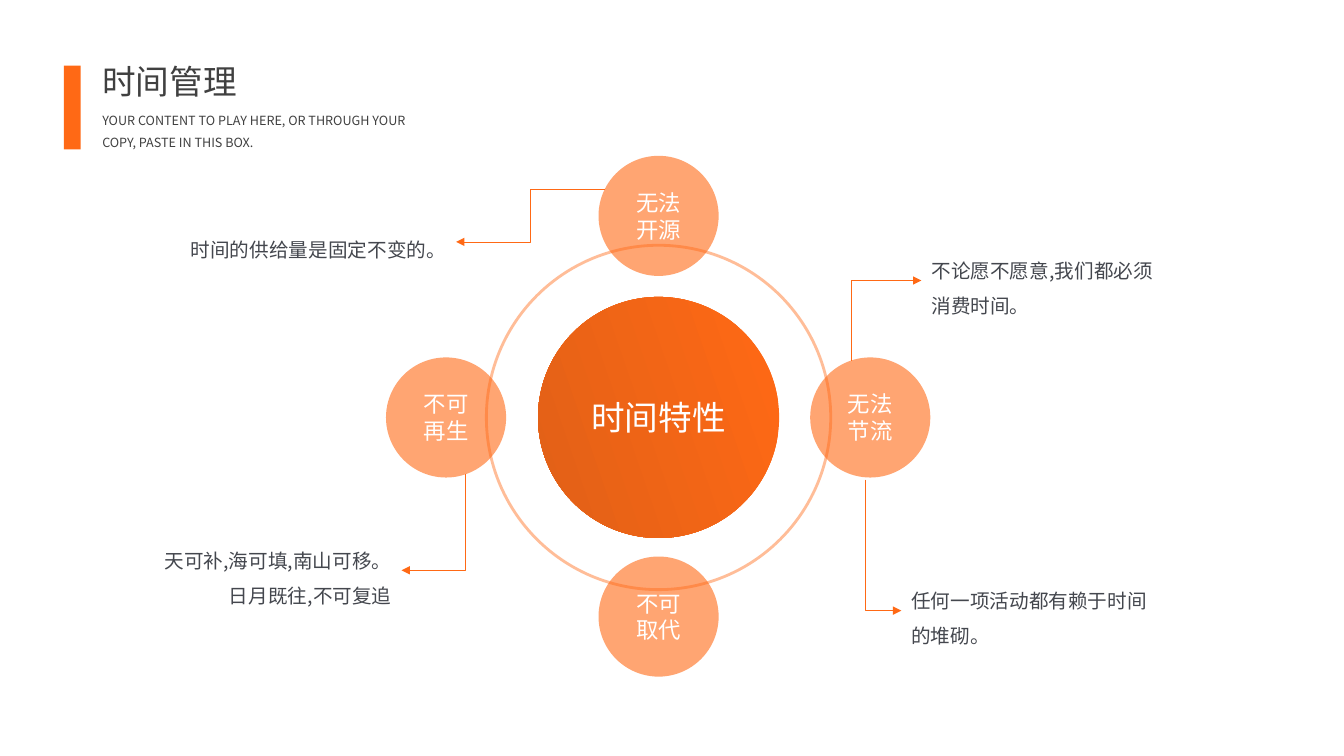
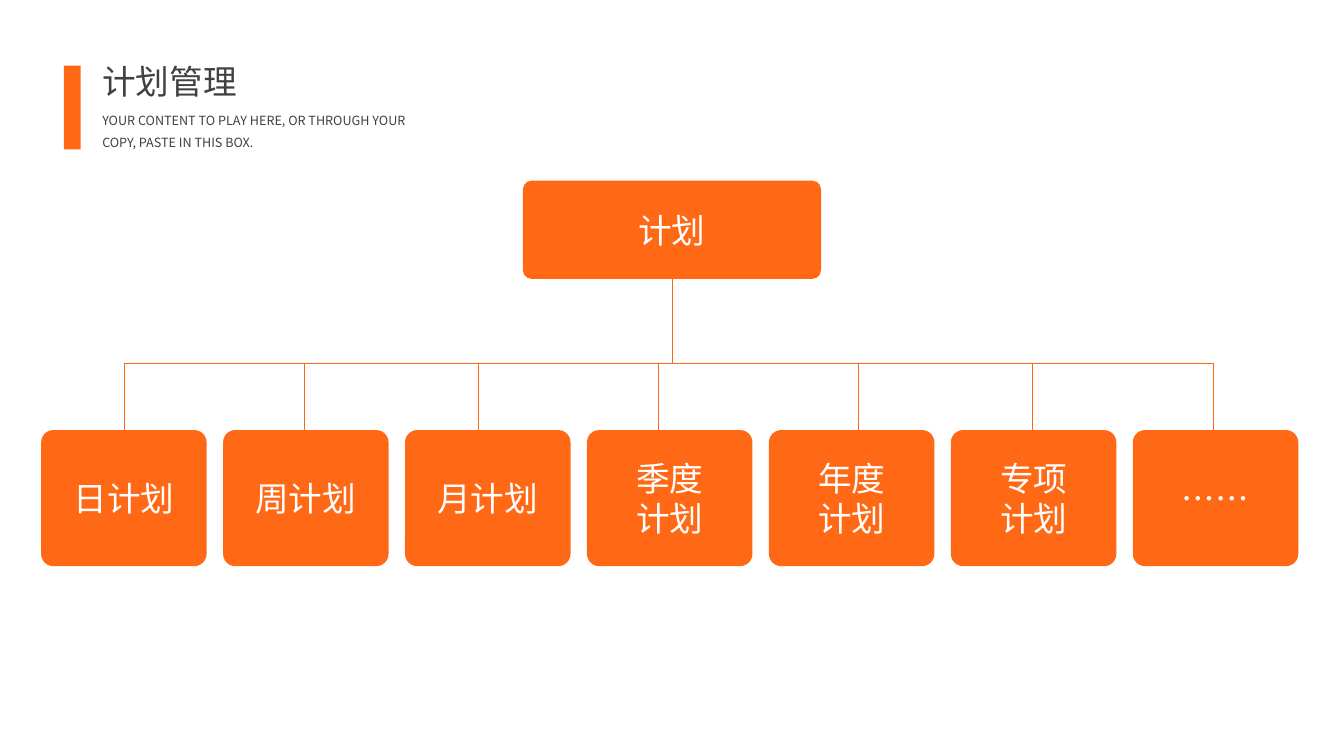
from dataclasses import dataclass

from pptx import Presentation
from pptx.dml.color import RGBColor
from pptx.enum.shapes import MSO_CONNECTOR as LINE, MSO_SHAPE as SHAPE
from pptx.enum.text import MSO_ANCHOR as ANCHOR, PP_ALIGN as ALIGN
from pptx.oxml.ns import qn
from pptx.util import Inches, Pt

# Shared look
FONT = "Noto Sans CJK SC"
ORANGE = RGBColor(0xFF, 0x69, 0x15)
DARK_ORANGE = RGBColor(0xE1, 0x60, 0x17)
WHITE = RGBColor(0xFF, 0xFF, 0xFF)
TITLE_GREY = RGBColor(0x40, 0x40, 0x40)
NOTE_GREY = RGBColor(0x44, 0x47, 0x4E)
SUBTITLE = "YOUR CONTENT TO PLAY HERE, OR THROUGH YOUR COPY, PASTE IN THIS BOX."

# The slide is a grid of 160 columns by 90 rows of square cells
WIDTH, HEIGHT = Inches(13.333), Inches(7.5)
CELL = HEIGHT / 90


def cells(*counts: float) -> list[int]:
    return [round(n * CELL) for n in counts]


@dataclass(frozen=True)
class Style:
    size: float
    color: RGBColor = WHITE
    align: ALIGN = ALIGN.LEFT
    spacing: float = 1.0


@dataclass(frozen=True)
class Satellite:
    lines: tuple[str, ...]
    dx: float  # offset from the centre of the disc
    dy: float


@dataclass(frozen=True)
class Note:
    lines: tuple[str, ...]
    start: tuple[float, float]
    tip: tuple[float, float]
    corners: int = 1


@dataclass(frozen=True)
class Plan:
    lines: tuple[str, ...]
    drop: float  # column of the line above the card


# Drawing helpers
def write(tf, lines: tuple[str, ...], style: Style) -> None:
    for i, line in enumerate(lines):
        p = tf.paragraphs[0] if i == 0 else tf.add_paragraph()
        p.alignment, p.line_spacing = style.align, style.spacing
        r = p.add_run()
        r.text = line
        r.font.size, r.font.name = Pt(style.size), FONT
        r.font.color.rgb = style.color
        ea = r._r.get_or_add_rPr().makeelement(qn("a:ea"), {"typeface": FONT})
        r._r.rPr.find(qn("a:latin")).addnext(ea)


def add_text(s, box: tuple[float, ...], lines: tuple[str, ...], style: Style) -> None:
    tf = s.shapes.add_textbox(*cells(*box)).text_frame
    tf.word_wrap = True
    write(tf, lines, style)


def add_block(s, kind: SHAPE, box: tuple[float, ...],
              lines: tuple[str, ...] = (), size: float = 24):
    sp = s.shapes.add_shape(kind, *cells(*box))
    sp.shadow.inherit = False
    sp.fill.solid()
    sp.fill.fore_color.rgb = ORANGE
    sp.line.fill.background()
    tf = sp.text_frame
    tf.word_wrap = False
    tf.vertical_anchor = ANCHOR.MIDDLE
    tf.margin_left = tf.margin_right = tf.margin_top = tf.margin_bottom = 0
    write(tf, lines, Style(size, align=ALIGN.CENTER))
    return sp


def add_circle(s, x: float, y: float, diameter: float,
               lines: tuple[str, ...] = (), size: float = 24):
    box = (x - diameter / 2, y - diameter / 2, diameter, diameter)
    return add_block(s, SHAPE.OVAL, box, lines, size)


def set_alpha(sp, percent: int) -> None:
    color = sp._element.spPr.find(".//" + qn("a:srgbClr"))
    color.append(color.makeelement(qn("a:alpha"), {"val": str(percent * 1000)}))


def add_line(s, start: tuple[float, float], end: tuple[float, float],
             kind: LINE = LINE.STRAIGHT):
    cx = s.shapes.add_connector(kind, *cells(*start, *end))
    cx.line.color.rgb, cx.line.width = ORANGE, Pt(0.5)
    pr = cx._element.spPr
    pr.append(pr.makeelement(qn("a:effectLst"), {}))
    return cx


def add_arrow(s, note: Note) -> None:
    cx = add_line(s, note.start, note.tip, LINE.ELBOW)
    ln = cx.line._get_or_add_ln()
    ln.append(ln.makeelement(qn("a:tailEnd"), {"type": "triangle"}))
    if note.corners == 2:
        return
    # One corner, vertical first: a quarter turn with swapped sides
    (x1, y1), (x2, y2) = note.start, note.tip
    w, h = abs(y2 - y1), abs(x2 - x1)
    cx.left, cx.top, cx.width, cx.height = cells(
        (x1 + x2 - w) / 2, (y1 + y2 - h) / 2, w, h)
    pr = cx._element.spPr
    pr.find(qn("a:prstGeom")).set("prst", "bentConnector2")
    xfrm = pr.find(qn("a:xfrm"))
    xfrm.set("rot", str(90 * 60000))
    xfrm.set("flipH", str(int(y2 < y1)))
    xfrm.set("flipV", str(int(x2 > x1)))


def add_note(s, note: Note) -> None:
    """Text beside the arrow tip, centred on it."""
    add_arrow(s, note)
    x, y = note.tip
    to_left = x < note.start[0]
    w, h = 33.1, 0.6 + 4.3 * len(note.lines)
    align = ALIGN.RIGHT if to_left else ALIGN.LEFT
    add_text(s, (x - w if to_left else x, y - h / 2, w, h), note.lines,
             Style(14, NOTE_GREY, align, 1.5))


def new_slide(prs, title: str):
    s = prs.slides.add_slide(prs.slide_layouts[6])
    add_text(s, (11, 6.7, 26.5, 6), (title,), Style(24, TITLE_GREY))
    add_text(s, (11, 11.9, 39.8, 6.7), (SUBTITLE,), Style(9, TITLE_GREY, spacing=1.5))
    add_block(s, SHAPE.RECTANGLE, (7.6, 7.8, 2, 10))
    return s


# Slide 1: features of time around a disc
HUB_X, HUB_Y = 78.4, 49.7
SATELLITES = (
    Satellite(("无法", "开源"), 0, -24),
    Satellite(("不可", "取代"), 0, 23.7),
    Satellite(("不可", "再生"), -25.3, 0),
    Satellite(("无法", "节流"), 25.2, 0),
)
NOTES = (
    Note(("时间的供给量是固定不变的。",), (72, 22.6), (54.3, 28.8), 2),
    Note(("不论愿不愿意,我们都必须", "消费时间。"), (101.3, 43), (109.7, 33.4)),
    Note(("天可补,海可填,南山可移。", "日月既往,不可复追"), (55.4, 56.4), (47.8, 67.9)),
    Note(("任何一项活动都有赖于时间", "的堆砌。"), (103, 57.1), (107.3, 72.7)),
)


def time_slide(prs) -> None:
    s = new_slide(prs, "时间管理")
    disc = add_circle(s, HUB_X, HUB_Y, 28.7, ("时间特性",))
    disc.fill.gradient()
    disc.fill.gradient_angle = 199
    stops = ((0.03, ORANGE), (1, DARK_ORANGE))
    for stop, (position, color) in zip(disc.fill.gradient_stops, stops):
        stop.position, stop.color.rgb = position, color

    ring = add_circle(s, HUB_X, HUB_Y, 41)
    ring.fill.background()
    ring.line.color.rgb, ring.line.width = ORANGE, Pt(2)
    set_alpha(ring, 43)

    for sat in SATELLITES:
        sp = add_circle(s, HUB_X + sat.dx, HUB_Y + sat.dy, 14.3, sat.lines, 16)
        set_alpha(sp, 60)
    for note in NOTES:
        add_note(s, note)


# Slide 2: tree of plans
CARD_LEFT, CARD_TOP, CARD_W, CARD_H, CARD_STEP = 4.9, 51.2, 19.7, 16.2, 21.66
ROOT_TOP, ROOT_W, ROOT_H = 21.5, 35.5, 11.7
MIDDLE, BAR_Y = 80, 43.2
PLANS = (
    Plan(("日计划",), 14.8),
    Plan(("周计划",), 36.2),
    Plan(("月计划",), 56.9),
    Plan(("季度", "计划"), 78.4),
    Plan(("年度", "计划"), 102.2),
    Plan(("专项", "计划"), 122.9),
    Plan(("……",), 144.5),
)


def add_card(s, box: tuple[float, ...], lines: tuple[str, ...]) -> None:
    add_block(s, SHAPE.ROUNDED_RECTANGLE, box, lines).adjustments[0] = 0.09


def plan_slide(prs) -> None:
    s = new_slide(prs, "计划管理")
    add_card(s, (MIDDLE - ROOT_W / 2, ROOT_TOP, ROOT_W, ROOT_H), ("计划",))
    add_line(s, (MIDDLE, ROOT_TOP + ROOT_H), (MIDDLE, BAR_Y))
    add_line(s, (PLANS[0].drop, BAR_Y), (PLANS[-1].drop, BAR_Y))
    for i, plan in enumerate(PLANS):
        add_card(s, (CARD_LEFT + i * CARD_STEP, CARD_TOP, CARD_W, CARD_H), plan.lines)
        add_line(s, (plan.drop, BAR_Y), (plan.drop, CARD_TOP))


def main() -> None:
    prs = Presentation()
    prs.slide_width, prs.slide_height = WIDTH, HEIGHT
    time_slide(prs)
    plan_slide(prs)
    prs.save("out.pptx")


if __name__ == "__main__":
    main()
